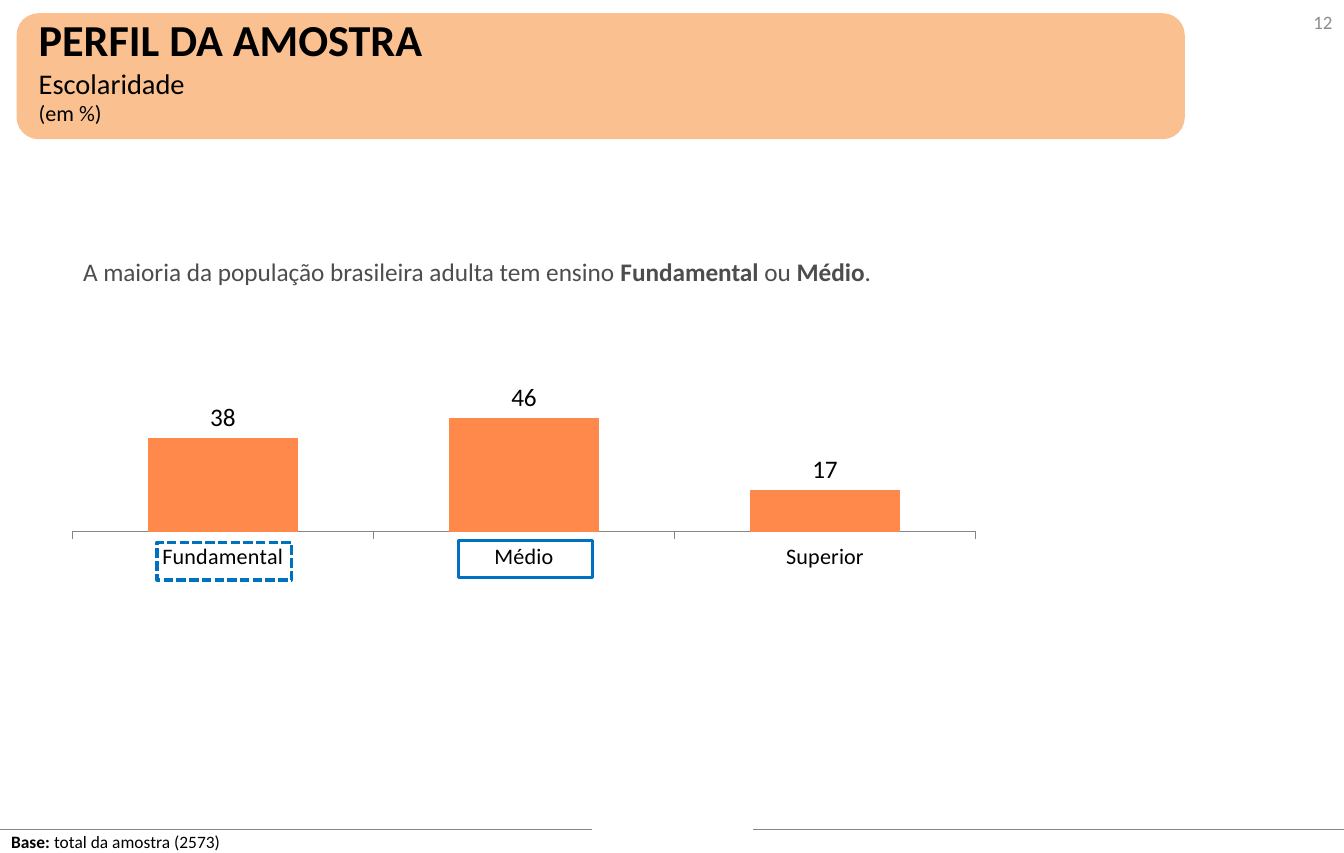
from lxml import etree
from pptx import Presentation
from pptx.chart.data import CategoryChartData
from pptx.dml.color import RGBColor
from pptx.enum.chart import XL_CHART_TYPE, XL_LABEL_POSITION, XL_TICK_MARK
from pptx.enum.dml import MSO_LINE
from pptx.enum.shapes import MSO_CONNECTOR, MSO_SHAPE
from pptx.enum.text import MSO_ANCHOR, MSO_AUTO_SIZE, PP_ALIGN
from pptx.oxml import parse_xml
from pptx.oxml.ns import nsdecls, qn
from pptx.util import Inches, Pt

FONT = "Calibri"
SLIDE_WIDTH = 11 + 13 / 16
COLORS = {
    "banner": "FAC090",
    "bar": "FF894A",
    "highlight": "0070C0",
    "text": "000000",
    "body": "4D4D4D",
    "number": "8C8C8C",
    "rule": "868686",
}


def rgb(name):
    return RGBColor.from_string(COLORS[name])


def box(*lengths):
    return [Inches(v) for v in lengths]


def style(font, size, color="text", bold=False):
    font.name, font.size, font.bold = FONT, Pt(size), bold
    font.color.rgb = rgb(color)


def add_frame(slide, preset, at, line, fill=None, dash=None):
    sp = slide.shapes.add_shape(preset, *box(*at))
    sp.shadow.inherit = False
    if fill:
        sp.fill.solid()
        sp.fill.fore_color.rgb = rgb(fill)
    else:
        sp.fill.background()
    sp.line.color.rgb = rgb(line)
    sp.line.width = Pt(2)
    if dash:
        sp.line.dash_style = dash
    return sp


def add_rule(slide, left, right, y):
    line = slide.shapes.add_connector(MSO_CONNECTOR.STRAIGHT, *box(left, y, right, y))
    line.line.color.rgb = rgb("rule")
    line.line.width = Pt(0.75)
    etree.SubElement(line._element.spPr, qn("a:effectLst"))


def add_text(slide, at, parts, size, color="text"):
    """Add a one-paragraph box from (text, bold) parts."""
    tf = slide.shapes.add_textbox(*box(*at)).text_frame
    tf.word_wrap = True
    for text, bold in parts:
        r = tf.paragraphs[0].add_run()
        r.text = text
        style(r.font, size, color, bold)
    return tf


def set_title(slide, at, lines):
    """Fill the title placeholder from (text, size, bold) lines."""
    sp = slide.shapes.title
    sp.left, sp.top, sp.width, sp.height = box(*at)
    tf = sp.text_frame
    tf.text = "\n".join(text for text, _, _ in lines)
    tf.vertical_anchor = MSO_ANCHOR.TOP
    tf.auto_size = MSO_AUTO_SIZE.NONE
    for p, (_, size, bold) in zip(tf.paragraphs, lines):
        p.alignment = PP_ALIGN.LEFT
        style(p.runs[0].font, size, bold=bold)


def set_plot_layout(chart, height):
    """Stretch the inner plot over the full width and a share of the height."""
    values = {"x": 0, "y": 0, "w": 1, "h": height}
    sizes = "".join(f'<c:{k} val="{v}"/>' for k, v in values.items())
    modes = '<c:xMode val="edge"/><c:yMode val="edge"/>'
    layout = parse_xml(
        f'<c:layout {nsdecls("c")}><c:manualLayout><c:layoutTarget val="inner"/>'
        f"{modes}{sizes}</c:manualLayout></c:layout>"
    )
    plot_area = chart._chartSpace.chart.plotArea
    for old in plot_area.findall(qn("c:layout")):
        plot_area.remove(old)
    plot_area.insert(0, layout)


def add_column_chart(slide, at, categories, values):
    data = CategoryChartData(number_format="###0")
    data.categories = categories
    data.add_series("Series 1", values)
    chart = slide.shapes.add_chart(
        XL_CHART_TYPE.COLUMN_CLUSTERED, *box(*at), data
    ).chart
    style(chart.font, 18)
    chart.has_legend = False
    chart.has_title = False
    set_plot_layout(chart, 0.85)

    axis = chart.category_axis
    axis.major_tick_mark = XL_TICK_MARK.OUTSIDE
    axis.format.line.color.rgb = rgb("rule")
    axis.format.line.width = Pt(0.75)
    style(axis.tick_labels.font, 14)

    scale = chart.value_axis
    scale.minimum_scale, scale.maximum_scale = 0, 100
    scale.has_major_gridlines = False
    scale.visible = False

    plot = chart.plots[0]
    plot.gap_width = 100
    plot.vary_by_categories = False
    fill = plot.series[0].format.fill
    fill.solid()
    fill.fore_color.rgb = rgb("bar")
    labels = plot.series[0].data_labels
    labels.show_value = True
    labels.position = XL_LABEL_POSITION.OUTSIDE_END
    labels.number_format = "###0"
    labels.number_format_is_linked = False
    style(labels.font, 16)


def main():
    prs = Presentation()
    prs.slide_width = Inches(SLIDE_WIDTH)
    prs.slide_height = Inches(7.5)
    slide = prs.slides.add_slide(prs.slide_layouts[5])

    banner = add_frame(slide, MSO_SHAPE.ROUNDED_RECTANGLE,
                       (0.16, 0.13, 10.24, 1.08), "banner", fill="banner")
    slide.shapes.title._element.addprevious(banner._element)
    set_title(slide, (0.24, 0.06, 7.09, 1.14), [
        ("PERFIL DA AMOSTRA", 28, True),
        ("Escolaridade", 18, False),
        ("(em %)", 14, False),
    ])
    for left, right in ((0, 5.2), (6.62, SLIDE_WIDTH)):
        add_rule(slide, left, right, 7.29)

    number = add_text(slide, (10.55, -0.01, 1.26, 0.4), [("12", False)], 12, "number")
    number.vertical_anchor = MSO_ANCHOR.MIDDLE
    number.paragraphs[0].alignment = PP_ALIGN.RIGHT

    add_column_chart(slide, (0.63, 2.51, 7.95, 2.55),
                     ["Fundamental", "Médio", "Superior"], [38, 46, 17])

    message = add_text(slide, (0.61, 2.17, 8.84, 0.42), [
        ("A maioria da população brasileira adulta tem ensino ", False),
        ("Fundamental", True),
        (" ou ", False),
        ("Médio", True),
        (".", False),
    ], 16, "body")
    message.margin_left = message.margin_right = Inches(0.12)
    message.margin_top = message.margin_bottom = Inches(0.06)
    message.paragraphs[0].line_spacing = 1.1

    add_text(slide, (0, 7.26, 4.07, 0.29),
             [("Base: ", True), ("total da amostra (2573)", False)], 11)

    for left, top, dash in ((4.03, 4.75, None), (1.38, 4.77, MSO_LINE.SQUARE_DOT)):
        add_frame(slide, MSO_SHAPE.RECTANGLE, (left, top, 1.18, 0.33),
                  "highlight", dash=dash)

    prs.save("out.pptx")


if __name__ == "__main__":
    main()
